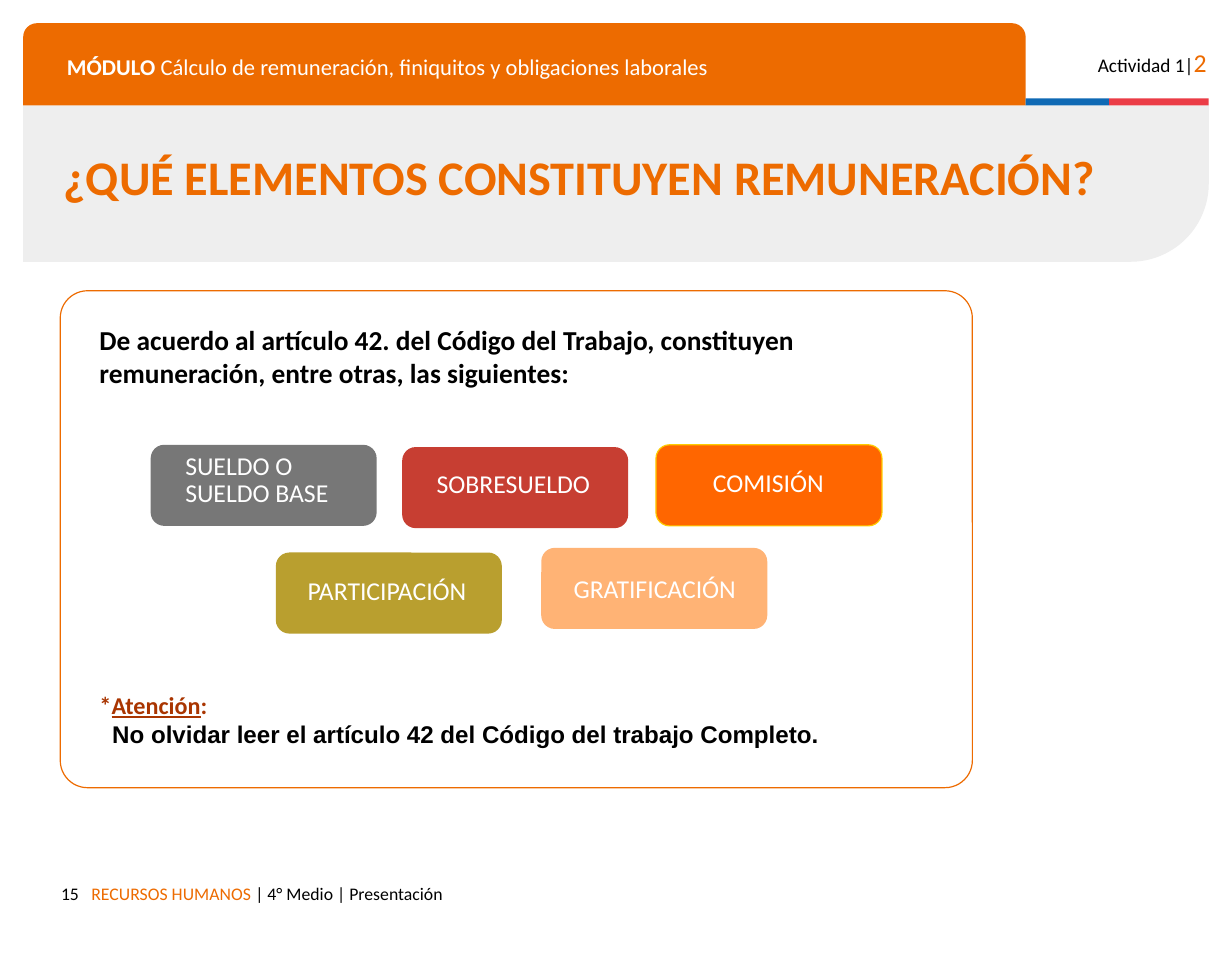
from dataclasses import dataclass

from pptx import Presentation
from pptx.dml.color import RGBColor
from pptx.enum.shapes import MSO_SHAPE
from pptx.enum.text import PP_ALIGN
from pptx.util import Inches, Pt

RECTANGLE = MSO_SHAPE.RECTANGLE
ROUNDED = MSO_SHAPE.ROUNDED_RECTANGLE
ONE_ROUND = MSO_SHAPE.ROUND_1_RECTANGLE
TOP_ROUND = MSO_SHAPE.ROUND_2_SAME_RECTANGLE
LEFT, CENTER, RIGHT = PP_ALIGN.LEFT, PP_ALIGN.CENTER, PP_ALIGN.RIGHT

Place = tuple[float, float, float, float]


@dataclass(frozen=True)
class Theme:
    orange: str = "ED6B00"
    blue: str = "0F69B4"
    red: str = "EB3C46"
    band: str = "EEEEEE"
    white: str = "FFFFFF"
    black: str = "000000"
    rust: str = "A93501"
    gold: str = "FECC00"
    body_font: str = "Calibri"
    note_font: str = "Arial"
    title: int = 30
    lead: int = 17
    label: int = 16
    note: int = 15
    module: int = 14
    activity: int = 12
    footer: int = 11


THEME = Theme()


@dataclass(frozen=True)
class Span:
    text: str
    size: int
    color: str
    bold: bool = False
    underline: bool = False
    font: str = THEME.body_font


@dataclass(frozen=True)
class Para:
    spans: list[Span]
    align: PP_ALIGN = LEFT
    spacing: float = 1.0
    indent: float = 0.0


@dataclass(frozen=True)
class Panel:
    place: Place
    fill: str
    kind: MSO_SHAPE = RECTANGLE
    rounding: tuple[float, ...] = ()
    line: str | None = None


@dataclass(frozen=True)
class Card:
    """A coloured pay item with its label."""
    text: str
    left: float
    top: float
    fill: str
    label_place: Place
    line: str | None = None
    align: PP_ALIGN = CENTER
    spacing: float = 0.9


def draw_panel(page, panel: Panel):
    box = page.shapes.add_shape(panel.kind, *map(Inches, panel.place))
    box.shadow.inherit = False
    box.fill.solid()
    box.fill.fore_color.rgb = RGBColor.from_string(panel.fill)
    for index, amount in enumerate(panel.rounding):
        box.adjustments[index] = amount
    if panel.line:
        box.line.color.rgb = RGBColor.from_string(panel.line)
        box.line.width = Pt(0.75)
    else:
        box.line.fill.background()
    return box


def draw_text(page, place: Place, paras: list[Para], margin: float = 0.05) -> None:
    frame = page.shapes.add_textbox(*map(Inches, place)).text_frame
    layout = {"word_wrap": True, "margin_left": Inches(0.1), "margin_right": Inches(0.1),
              "margin_top": Inches(margin), "margin_bottom": Inches(margin)}
    for name, value in layout.items():
        setattr(frame, name, value)
    for index, para in enumerate(paras):
        paragraph = frame.add_paragraph() if index else frame.paragraphs[0]
        paragraph.alignment = para.align
        paragraph.line_spacing = para.spacing
        if para.indent:
            paragraph._p.get_or_add_pPr().set("marL", str(Inches(para.indent)))
        for span in para.spans:
            run = paragraph.add_run()
            run.text = span.text
            formats = {"name": span.font, "size": Pt(span.size),
                       "bold": span.bold, "underline": span.underline}
            for name, value in formats.items():
                setattr(run.font, name, value)
            run.font.color.rgb = RGBColor.from_string(span.color)


def draw_card(page, card: Card) -> None:
    draw_panel(page, Panel((card.left, card.top, 1.95, 0.7), card.fill,
                           ROUNDED, (0.167,), card.line))
    label = Span(card.text, THEME.label, THEME.white)
    draw_text(page, card.label_place, [Para([label], card.align, card.spacing)])


CARDS = [
    Card("SUELDO O SUELDO BASE", 1.3, 3.84, "777777", (1.5, 3.86, 1.79, 0.59), align=LEFT),
    Card("SOBRESUELDO", 3.47, 3.86, "C73E32", (3.61, 4.02, 1.64, 0.59)),
    Card("COMISIÓN", 5.66, 3.84, "FF6600", (5.81, 3.98, 1.64, 0.37), THEME.gold, spacing=1.0),
    Card("PARTICIPACIÓN", 2.38, 4.77, "B99F2F", (2.52, 4.94, 1.64, 0.59)),
    Card("GRATIFICACIÓN", 4.67, 4.73, "FFB375", (4.83, 4.93, 1.64, 0.59)),
]


def draw_frame(page) -> None:
    # Title band, with its round corner turned to the bottom right
    band = draw_panel(page, Panel((0.2, 0.91, 10.23, 1.35), THEME.band, ONE_ROUND, (0.5,)))
    band.rotation = 180
    band._element.spPr.xfrm.set("flipH", "1")

    # Module tab and two-colour rule
    for panel in (
        Panel((0.2, 0.2, 8.65, 0.71), THEME.orange, TOP_ROUND, (0.167, 0)),
        Panel((8.85, 0.85, 0.72, 0.06), THEME.blue),
        Panel((9.57, 0.85, 0.86, 0.06), THEME.red),
    ):
        draw_panel(page, panel)

    # Header and footer texts
    draw_text(page, (9.23, 0.3, 1.28, 0.38), [Para([
        Span("Actividad 1|", THEME.activity, THEME.black),
        Span("2", THEME.label, THEME.orange)], RIGHT)], 0.1)
    draw_text(page, (0.48, 0.38, 8.14, 0.35), [Para([
        Span("MÓDULO ", THEME.module, THEME.white, bold=True),
        Span("Cálculo de remuneración, finiquitos y obligaciones laborales",
             THEME.module, THEME.white)], spacing=0.9)], 0.1)
    draw_text(page, (0.69, 7.53, 7.14, 0.38), [Para([
        Span("RECURSOS HUMANOS ", THEME.footer, THEME.orange),
        Span("| 4° Medio | Presentación", THEME.footer, THEME.black)])], 0.1)
    draw_text(page, (0.2, 7.53, 0.58, 0.29), [Para([
        Span("15", THEME.footer, THEME.black)], RIGHT)], 0.1)


def draw_content(page) -> None:
    # Outlined area and title
    draw_panel(page, Panel((0.52, 2.51, 7.87, 4.29), THEME.white, ROUNDED,
                           (0.055,), THEME.orange))
    draw_text(page, (0.45, 1.22, 9.89, 0.61), [Para([
        Span("¿QUÉ ELEMENTOS CONSTITUYEN REMUNERACIÓN?",
             THEME.title, THEME.orange, bold=True)])])

    # Introduction and pay items
    draw_text(page, (0.76, 2.74, 7.54, 0.67), [Para([
        Span("De acuerdo al artículo 42. del Código del Trabajo, constituyen "
             "remuneración, entre otras, las siguientes:",
             THEME.lead, THEME.black, bold=True)])])
    for card in CARDS:
        draw_card(page, card)

    # Reminder
    draw_text(page, (0.76, 5.91, 7.69, 0.86), [
        Para([Span("*", THEME.note, THEME.rust, bold=True),
              Span("Atención", THEME.note, THEME.rust, bold=True, underline=True),
              Span(":", THEME.note, THEME.rust, bold=True)]),
        Para([Span("No olvidar leer el artículo 42 del Código del trabajo Completo.",
                   THEME.note, THEME.black, bold=True, font=THEME.note_font)], indent=0.11),
    ])


def main() -> None:
    deck = Presentation()
    deck.slide_width, deck.slide_height = Inches(10.63), Inches(8.27)
    page = deck.slides.add_slide(deck.slide_layouts[6])
    draw_frame(page)
    draw_content(page)
    deck.save("out.pptx")


if __name__ == "__main__":
    main()
